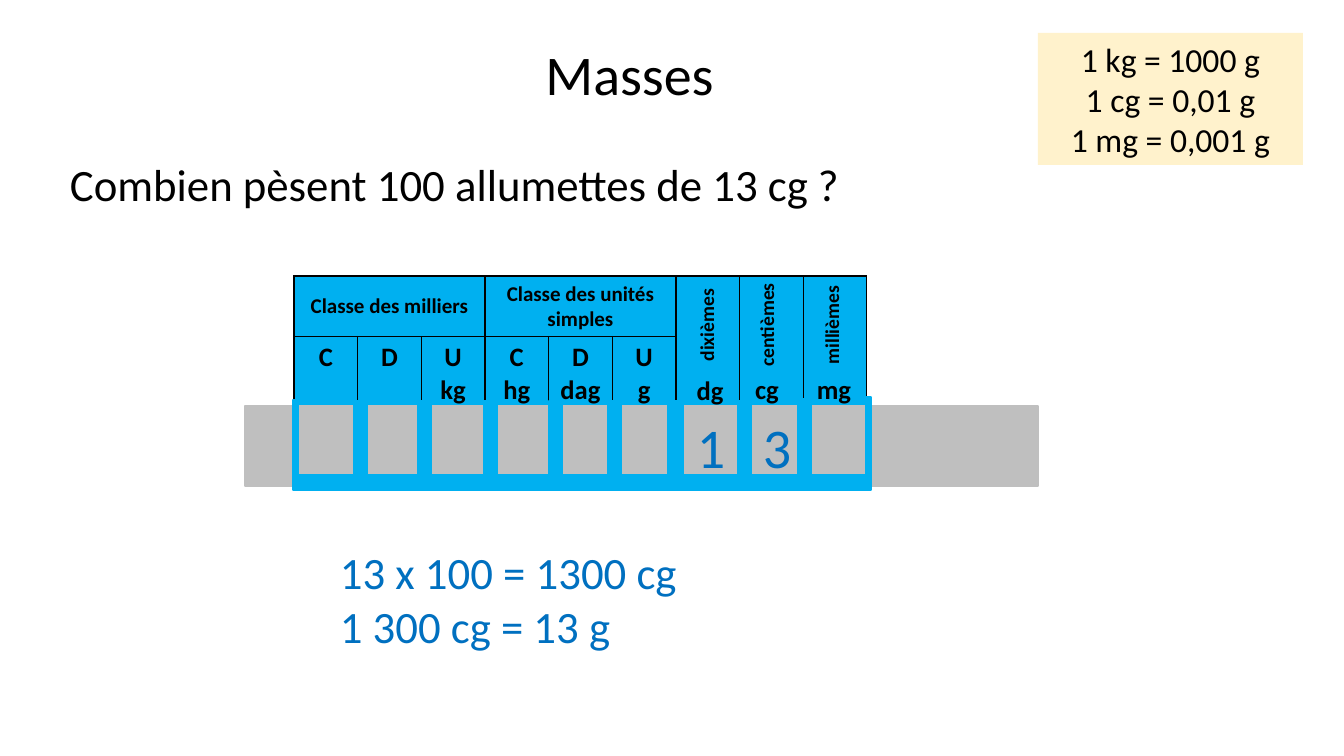
from lxml import etree
from pptx import Presentation, util as u
from pptx.dml.color import RGBColor
from pptx.enum import shapes, text
from pptx.oxml import ns

EMU_PER_PX = 914400 / 100.8
BLACK, WHITE, GREY, CREAM = "000000", "FFFFFF", "BFBFBF", "FFF2CC"
SKY, BLUE = "00B0F0", "0070C0"
LEFT, CENTER = text.PP_ALIGN.LEFT, text.PP_ALIGN.CENTER
TOP, MIDDLE = text.MSO_ANCHOR.TOP, text.MSO_ANCHOR.MIDDLE


def px(length):
    return u.Emu(round(length * EMU_PER_PX))


def color(code):
    return RGBColor.from_string(code)


def write(frame, words, size=32, ink=BLACK, bold=False, align=LEFT, spacing=1.0):
    """Fill a text frame, one paragraph for each line of words."""
    for index, line in enumerate(words.split("\n")):
        para = frame.add_paragraph() if index else frame.paragraphs[0]
        para.alignment, para.line_spacing = align, spacing
        span = para.add_run()
        span.text = line
        span.font.name, span.font.size = "Calibri", u.Pt(size)
        span.font.bold, span.font.color.rgb = bold, color(ink)


class Board:
    """The current slide and the style of its elements."""

    def __init__(self, page):
        self.page = page

    def label(self, area, words, anchor=TOP, turn=0, wrap=True, **style):
        box = self.page.shapes.add_textbox(*map(px, area))
        box.rotation = turn
        box.text_frame.word_wrap = wrap
        box.text_frame.vertical_anchor = anchor
        write(box.text_frame, words, **style)

    def panel(self, area, fill, words="", outline=False, anchor=TOP, **style):
        box = self.page.shapes.add_shape(shapes.MSO_SHAPE.RECTANGLE, *map(px, area))
        box.shadow.inherit = False
        box.fill.solid()
        box.fill.fore_color.rgb = color(fill)
        if outline:
            box.line.color.rgb = color(fill)
            box.line.width = u.Pt(1)
        else:
            box.line.fill.background()
        if words:
            box.text_frame.word_wrap = True
            box.text_frame.vertical_anchor = anchor
            write(box.text_frame, words, **style)

    def border(self, cell):
        """Draw a thin black line on the four sides of a cell."""
        props = cell._tc.get_or_add_tcPr()
        for index, side in enumerate(("lnL", "lnR", "lnT", "lnB")):
            line = etree.Element(ns.qn(f"a:{side}"), w=str(u.Pt(1)))
            fill = etree.SubElement(line, ns.qn("a:solidFill"))
            etree.SubElement(fill, ns.qn("a:srgbClr"), val=BLACK)
            props.insert(index, line)

    def unit_table(self, area, row_heights, classes, units, decimals):
        columns = len(units) + decimals
        grid = self.page.shapes.add_table(2, columns, *map(px, area)).table
        for row, height in zip(grid.rows, row_heights):
            row.height = px(height)
        for column in grid.columns:
            column.width = px(area[2] / columns)
        for cell in grid.iter_cells():
            cell.fill.solid()
            cell.fill.fore_color.rgb = color(SKY)
            cell.margin_left = cell.margin_right = u.Inches(0.1)
            cell.margin_top = cell.margin_bottom = u.Inches(0.05)
            self.border(cell)
        for index, name in enumerate(classes):
            head = grid.cell(0, 3 * index)
            head.merge(grid.cell(0, 3 * index + 2))
            head.vertical_anchor = MIDDLE
            write(head.text_frame, name, size=15, bold=True, align=CENTER)
        for index, unit in enumerate(units):
            write(grid.cell(1, index).text_frame, unit, size=19, bold=True, align=CENTER)
        for index in range(len(units), columns):
            grid.cell(0, index).merge(grid.cell(1, index))


def main():
    deck = Presentation()
    deck.slide_width, deck.slide_height = px(1344), px(756)
    board = Board(deck.slides.add_slide(deck.slide_layouts[6]))

    board.label((202, 33, 855, 89), "Masses", anchor=MIDDLE, size=40,
                align=CENTER, spacing=0.9)
    board.panel((60, 152, 811, 65), WHITE, "Combien pèsent 100 allumettes de 13 cg ?")

    board.unit_table((294, 276, 573, 135), (60, 75),
                     ("Classe des milliers", "Classe des unités simples"),
                     ("C", "D", "U\nkg", "C\nhg", "D\ndag", "U\ng"), decimals=3)
    for center, rank in ((706, "dixièmes"), (766, "centièmes"), (831, "millièmes")):
        board.label((center - 58, 308, 117, 34), rank, turn=270, size=14,
                    bold=True, align=CENTER)
    for center, top, unit in ((710, 369, "dg"), (767, 368, "cg"), (834, 368, "mg")):
        board.label((center - 28, top, 56, 42), unit, wrap=False, size=19,
                    bold=True, align=CENTER)

    board.panel((245, 406, 793, 80), GREY, outline=True)
    for center, digit in ((711, "1"), (777, "3")):
        board.label((center - 35, 406, 70, 80), digit, anchor=MIDDLE, size=40,
                    ink=BLUE, align=CENTER)

    dividers = [(left, 401, 13, 89) for left in (354, 418, 484, 549, 608)]
    dividers += [(668, 401, 10, 89), (678, 401, 5, 85), (738, 401, 13, 82), (798, 399, 13, 82)]
    frame = [(293, 400, 5, 89), (293, 475, 578, 15), (866, 397, 5, 89)]
    for area in dividers + frame:
        board.panel(area, SKY, outline=True)

    board.panel((1038, 33, 265, 132), CREAM, "1 kg = 1000 g\n1 cg = 0,01 g\n1 mg = 0,001 g",
                anchor=MIDDLE, size=24, align=CENTER)
    board.label((330, 540, 396, 119), "13 x 100 = 1300 cg\n1 300 cg = 13 g", ink=BLUE)

    deck.save("out.pptx")


if __name__ == "__main__":
    main()
